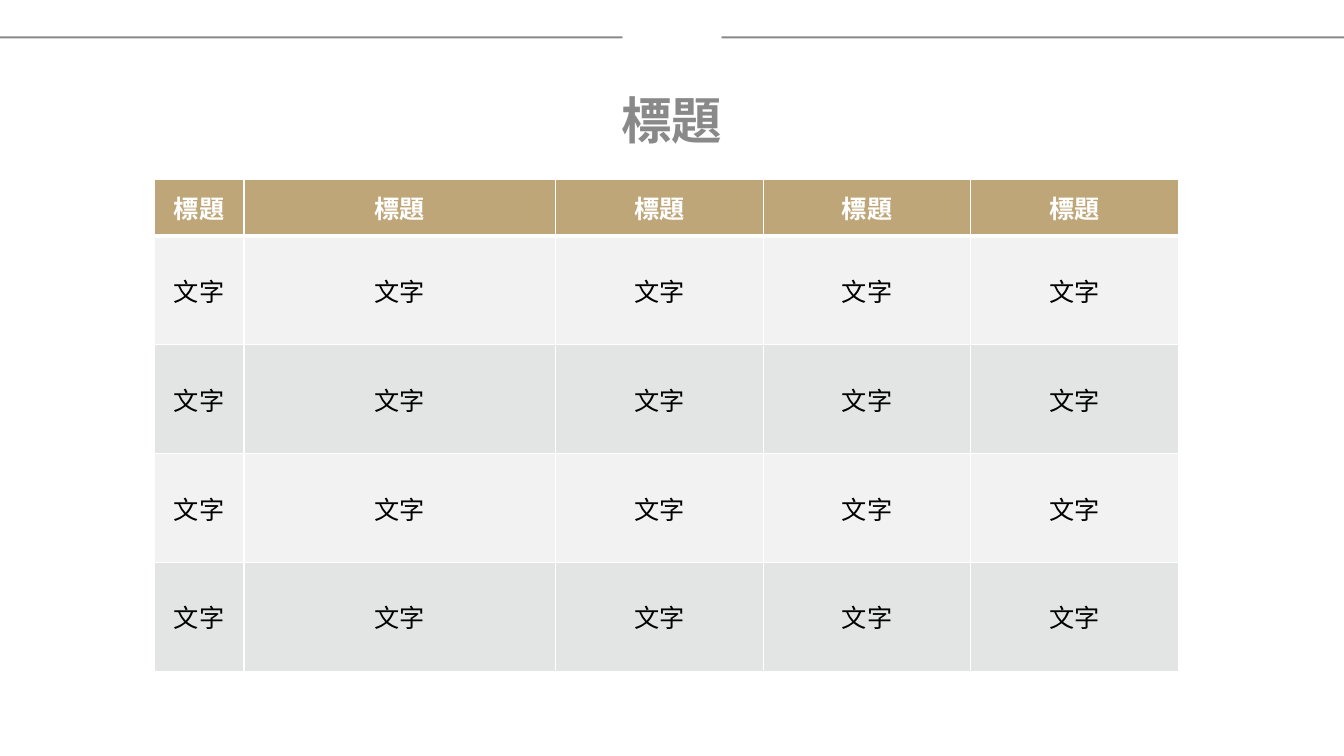
from lxml import etree
from pptx import Presentation
from pptx.dml.color import RGBColor
from pptx.enum.shapes import MSO_SHAPE
from pptx.enum.text import MSO_ANCHOR, MSO_AUTO_SIZE, PP_ALIGN
from pptx.oxml.ns import qn
from pptx.util import Inches, Pt

ROUNDED = MSO_SHAPE.ROUNDED_RECTANGLE
CENTER = PP_ALIGN.CENTER
TOP, MIDDLE = MSO_ANCHOR.TOP, MSO_ANCHOR.MIDDLE
FIT_SHAPE = MSO_AUTO_SIZE.SHAPE_TO_FIT_TEXT

COLORS = {
    "gray": "898989",
    "gold": "BFA679",
    "white": "FFFFFF",
    "black": "000000",
    "light": "F2F2F2",
    "band": "C9CACA",
}
FONT = "Noto Sans CJK SC"
SLIDE_W, SLIDE_H = 13.33, 7.5
TITLE_FORMAT = {"size": Pt(36), "bold": True}
HEADER_FORMAT = {"size": Pt(18), "bold": True}
BODY_FORMAT = {"size": Pt(18), "bold": False}

COLUMN_WIDTHS = [0.89, 3.09, 2.06, 2.06, 2.06]
HEADER_HEIGHT, BODY_HEIGHT = 0.56, 1.08
ROWS = [["標題"] * 5] + [["文字"] * 5 for _ in range(4)]


def rgb(name):
    return RGBColor.from_string(COLORS[name])


def write_centered(text_frame, text, color, font_format):
    paragraph = text_frame.paragraphs[0]
    paragraph.alignment = CENTER
    run = paragraph.add_run()
    run.text = text
    for attribute, value in font_format.items():
        setattr(run.font, attribute, value)
    run.font.color.rgb = rgb(color)
    run.font.name = FONT
    east_asian = etree.SubElement(run.font._element, qn("a:ea"))
    east_asian.set("typeface", FONT)


def add_top_rules(slide, center_y, gap=0.98, length=7.28, thickness=0.02):
    """Draw two rules that leave a centred gap and run past the slide edges."""
    left_end = (SLIDE_W - gap) / 2
    for left in (left_end - length, left_end + gap):
        rule = slide.shapes.add_shape(
            ROUNDED, Inches(left), Inches(center_y - thickness / 2),
            Inches(length), Inches(thickness))
        rule.adjustments[0] = 0.5
        rule.shadow.inherit = False
        rule.fill.solid()
        rule.fill.fore_color.rgb = rgb("gray")
        rule.line.fill.background()


def add_title(slide, left, top, width, height):
    title = slide.shapes.title
    title.left, title.top = Inches(left), Inches(top)
    title.width, title.height = Inches(width), Inches(height)
    frame = title.text_frame
    frame.word_wrap = True
    frame.auto_size = FIT_SHAPE
    frame.vertical_anchor = TOP
    write_centered(frame, "標題", "gray", TITLE_FORMAT)


def set_borders(cell, bottom_width):
    properties = cell._tc.get_or_add_tcPr()
    widths = {"lnL": 1, "lnR": 1, "lnT": 1, "lnB": bottom_width}
    for side, width in widths.items():
        line = etree.SubElement(properties, qn(f"a:{side}"), w=str(Pt(width)))
        fill = etree.SubElement(line, qn("a:solidFill"))
        etree.SubElement(fill, qn("a:srgbClr"), val=COLORS["white"])


def fill_cell(cell, color, opacity=100):
    cell.fill.solid()
    cell.fill.fore_color.rgb = rgb(color)
    if opacity < 100:
        color_element = cell._tc.tcPr.find(qn("a:solidFill"))[0]
        etree.SubElement(color_element, qn("a:alpha"), val=str(opacity * 1000))


def add_text_table(slide, left, top):
    heights = [HEADER_HEIGHT] + [BODY_HEIGHT] * (len(ROWS) - 1)
    table = slide.shapes.add_table(
        len(ROWS), len(COLUMN_WIDTHS), Inches(left), Inches(top),
        Inches(sum(COLUMN_WIDTHS)), Inches(sum(heights))).table
    for column, width in zip(table.columns, COLUMN_WIDTHS):
        column.width = Inches(width)
    for row_index, texts in enumerate(ROWS):
        table.rows[row_index].height = Inches(heights[row_index])
        is_header = row_index == 0
        for column_index, text in enumerate(texts):
            cell = table.cell(row_index, column_index)
            cell.vertical_anchor = MIDDLE
            set_borders(cell, 3 if is_header else 1)
            if is_header:
                fill_cell(cell, "gold")
                write_centered(cell.text_frame, text, "white", HEADER_FORMAT)
                continue
            if row_index % 2:
                fill_cell(cell, "light")
            else:
                fill_cell(cell, "band", opacity=50)
            write_centered(cell.text_frame, text, "black", BODY_FORMAT)


def main():
    presentation = Presentation()
    presentation.slide_width = Inches(SLIDE_W)
    presentation.slide_height = Inches(SLIDE_H)
    slide = presentation.slides.add_slide(presentation.slide_layouts[5])
    add_top_rules(slide, center_y=0.37)
    add_text_table(slide, 1.53, 1.78)
    add_title(slide, 5.78, 0.83, 1.77, 0.71)
    presentation.save("out.pptx")


if __name__ == "__main__":
    main()
